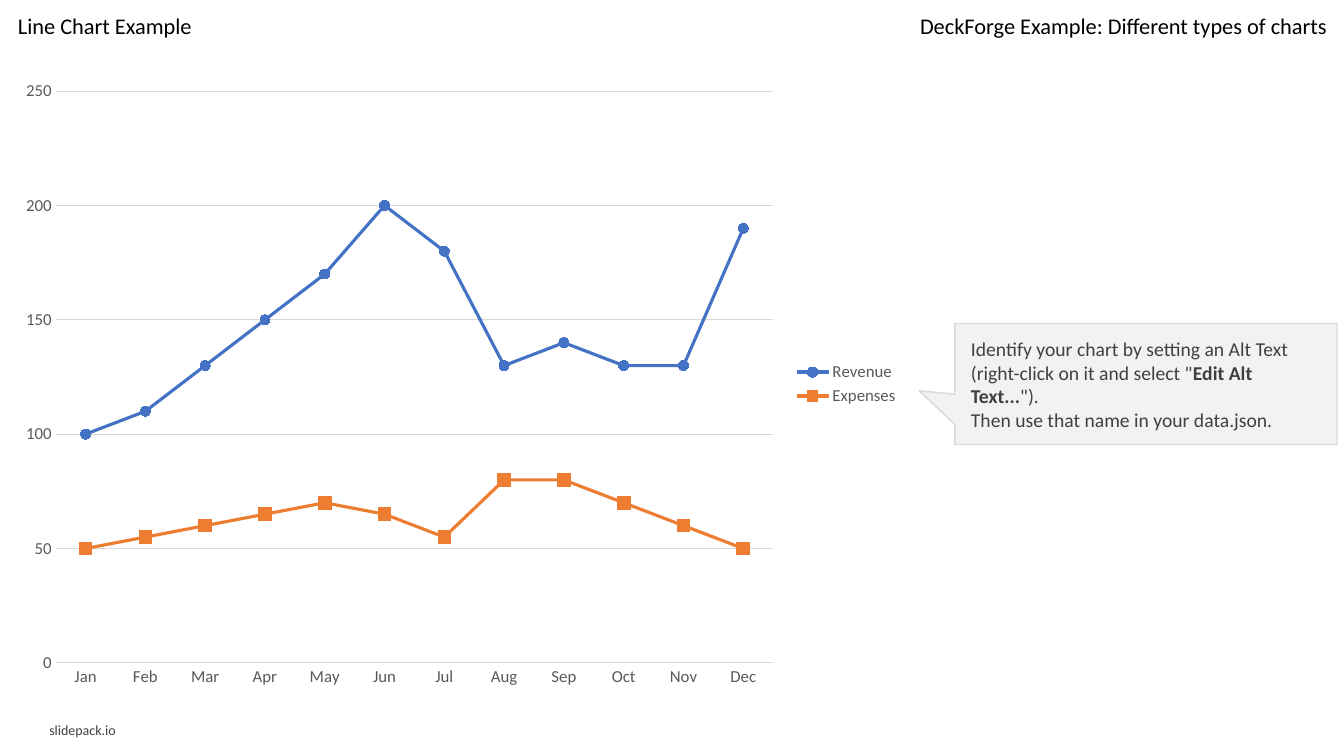
from dataclasses import dataclass

from lxml import etree
from pptx import Presentation
from pptx.chart.data import CategoryChartData
from pptx.dml.color import RGBColor
from pptx.enum.chart import XL_CHART_TYPE, XL_LEGEND_POSITION, XL_MARKER_STYLE, XL_TICK_MARK
from pptx.enum.shapes import MSO_SHAPE
from pptx.enum.text import MSO_ANCHOR, MSO_AUTO_SIZE, PP_ALIGN
from pptx.oxml.ns import qn
from pptx.util import Inches, Pt

LEFT, RIGHT = PP_ALIGN.LEFT, PP_ALIGN.RIGHT
TOP, MIDDLE = MSO_ANCHOR.TOP, MSO_ANCHOR.MIDDLE
FIT_SHAPE, FIXED = MSO_AUTO_SIZE.SHAPE_TO_FIT_TEXT, MSO_AUTO_SIZE.NONE
CIRCLE, SQUARE = XL_MARKER_STYLE.CIRCLE, XL_MARKER_STYLE.SQUARE
NO_TICK = XL_TICK_MARK.NONE

BLACK = RGBColor(0x00, 0x00, 0x00)
DARK_GREY = RGBColor(0x40, 0x40, 0x40)
LABEL_GREY = RGBColor(0x59, 0x59, 0x59)
LINE_GREY = RGBColor(0xD9, 0xD9, 0xD9)
PALE_GREY = RGBColor(0xF2, 0xF2, 0xF2)
BLUE = RGBColor(0x44, 0x72, 0xC4)
ORANGE = RGBColor(0xED, 0x7D, 0x31)

FONT = "Calibri"
ASIAN_FONT = "Noto Sans CJK JP"
MONTHS = "Jan Feb Mar Apr May Jun Jul Aug Sep Oct Nov Dec".split()


@dataclass
class Label:
    text: str
    area: tuple[float, float, float, float]
    size: int
    color: RGBColor
    align: PP_ALIGN = LEFT
    anchor: MSO_ANCHOR = TOP
    wrap: bool = False
    fit: MSO_AUTO_SIZE = FIT_SHAPE


@dataclass
class Trend:
    name: str
    values: list[int]
    color: RGBColor
    marker: XL_MARKER_STYLE
    marker_size: int


LABELS = [
    Label("slidepack.io", (0.39, 7.12, 2.91, 0.25), 10, DARK_GREY,
          anchor=MIDDLE, wrap=True, fit=FIXED),
    Label("DeckForge Example: Different types of charts", (9.02, 0.07, 4.24, 0.37),
          16, BLACK, align=RIGHT),
    Label("Line Chart Example", (0.08, 0.07, 1.95, 0.37), 16, BLACK),
]

TRENDS = [
    Trend("Revenue", [100, 110, 130, 150, 170, 200, 180, 130, 140, 130, 130, 190],
          BLUE, CIRCLE, 7),
    Trend("Expenses", [50, 55, 60, 65, 70, 65, 55, 80, 80, 70, 60, 50],
          ORANGE, SQUARE, 9),
]

# Each paragraph is a list of (text, bold) spans
CALLOUT_TEXT = [
    [('Identify your chart by setting an Alt Text (right-click on it and select "', False),
     ("Edit Alt Text...", True), ('").', False)],
    [("Then use that name in your data.json.", False)],
]


def apply(target, formats: dict) -> None:
    for name, value in formats.items():
        setattr(target, name, value)


def style_font(font, size: int, color: RGBColor, bold: bool = False) -> None:
    apply(font, {"name": FONT, "size": Pt(size), "bold": bold})
    font.color.rgb = color


def style_line(line, color: RGBColor, width: float) -> None:
    line.color.rgb = color
    line.width = Pt(width)


def add_label(page, label: Label) -> None:
    box = page.shapes.add_textbox(*map(Inches, label.area))
    apply(box.text_frame, {"word_wrap": label.wrap, "auto_size": label.fit,
                           "vertical_anchor": label.anchor})
    para = box.text_frame.paragraphs[0]
    para.alignment = label.align
    span = para.add_run()
    span.text = label.text
    style_font(span.font, label.size, label.color)
    if label.size == 10:
        latin = span.font._element.find(qn("a:latin"))
        asian = etree.Element(qn("a:ea"), typeface=ASIAN_FONT)
        latin.addnext(asian)


def add_line_chart(page) -> None:
    data = CategoryChartData()
    data.categories = MONTHS
    for trend in TRENDS:
        data.add_series(trend.name, trend.values)
    area = map(Inches, (0.08, 0.68, 8.94, 6.26))
    chart = page.shapes.add_chart(XL_CHART_TYPE.LINE_MARKERS, *area, data).chart
    style_font(chart.font, 10, BLACK)
    apply(chart, {"has_title": False, "has_legend": True})
    apply(chart.legend, {"position": XL_LEGEND_POSITION.RIGHT, "include_in_layout": False})
    style_font(chart.legend.font, 12, LABEL_GREY)

    # Axes and gridlines
    for axis in (chart.category_axis, chart.value_axis):
        apply(axis, {"major_tick_mark": NO_TICK, "minor_tick_mark": NO_TICK})
        style_font(axis.tick_labels.font, 12, LABEL_GREY)
    style_line(chart.category_axis.format.line, LINE_GREY, 0.75)
    apply(chart.value_axis, {"minimum_scale": 0, "maximum_scale": 250, "major_unit": 50,
                             "has_major_gridlines": True})
    chart.value_axis.format.line.fill.background()
    style_line(chart.value_axis.major_gridlines.format.line, LINE_GREY, 0.75)

    # Series
    chart.plots[0].vary_by_categories = False
    for series, trend in zip(chart.plots[0].series, TRENDS):
        series.smooth = False
        style_line(series.format.line, trend.color, 2.25)
        apply(series.marker, {"style": trend.marker, "size": trend.marker_size})
        series.marker.format.fill.solid()
        series.marker.format.fill.fore_color.rgb = trend.color
        style_line(series.marker.format.line, trend.color, 0.75)


def add_callout(page) -> None:
    area = map(Inches, (9.47, 3.21, 3.79, 1.2))
    callout = page.shapes.add_shape(MSO_SHAPE.RECTANGULAR_CALLOUT, *area)
    callout.adjustments[0], callout.adjustments[1] = -0.593, 0.057
    callout.shadow.inherit = False
    callout.fill.solid()
    callout.fill.fore_color.rgb = PALE_GREY
    style_line(callout.line, LINE_GREY, 1)
    frame = callout.text_frame
    apply(frame, {"word_wrap": True, "vertical_anchor": MIDDLE})
    apply(frame, {f"margin_{side}": Inches(0.16)
                  for side in ("left", "top", "right", "bottom")})
    for index, spans in enumerate(CALLOUT_TEXT):
        para = frame.add_paragraph() if index else frame.paragraphs[0]
        para.alignment = LEFT
        for text, bold in spans:
            span = para.add_run()
            span.text = text
            style_font(span.font, 14, DARK_GREY, bold)


def main() -> None:
    deck = Presentation()
    apply(deck, {"slide_width": Inches(13.33), "slide_height": Inches(7.5)})
    page = deck.slides.add_slide(deck.slide_layouts[6])
    footer, deck_title, chart_title = LABELS
    add_label(page, footer)
    add_label(page, deck_title)
    add_line_chart(page)
    add_label(page, chart_title)
    add_callout(page)
    deck.save("out.pptx")


if __name__ == "__main__":
    main()
